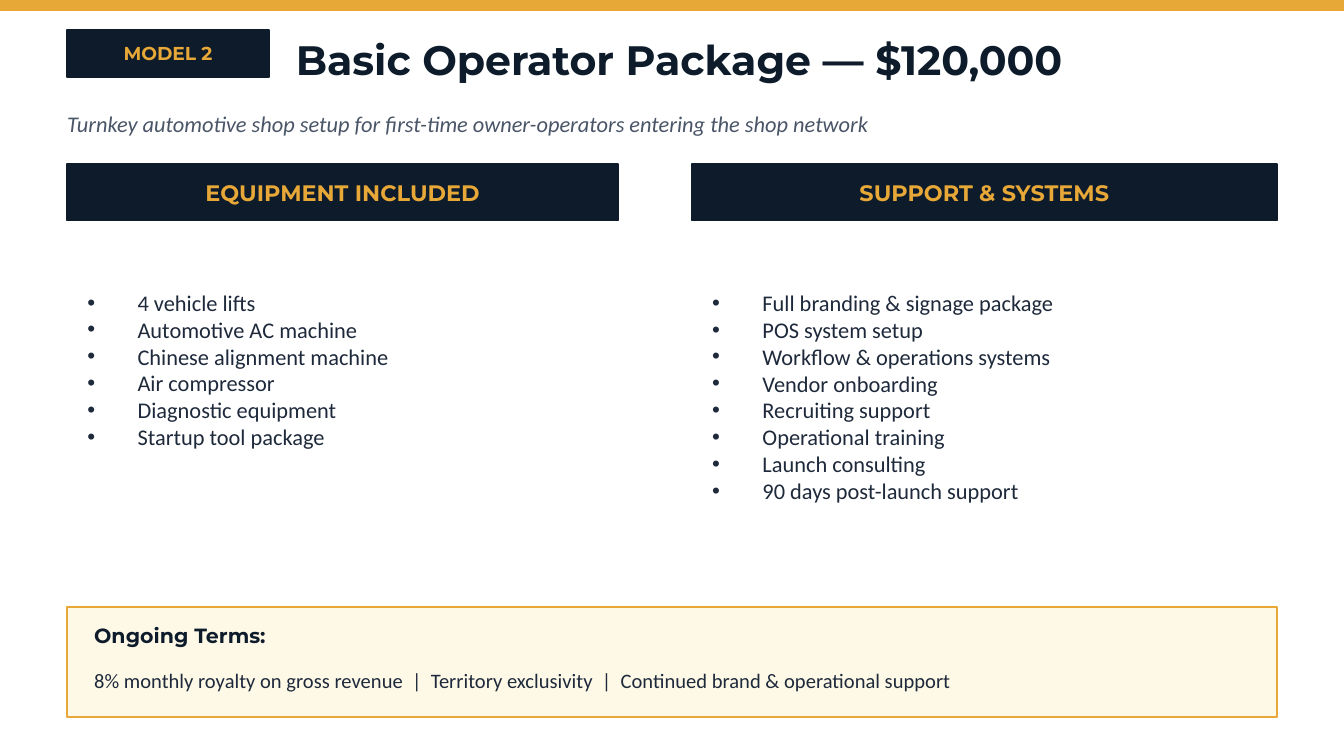
"""Build the Basic Operator Package slide."""
from dataclasses import dataclass

from lxml.etree import SubElement
from pptx import Presentation
from pptx.dml.color import RGBColor
from pptx.enum.shapes import MSO_SHAPE
from pptx.enum.text import MSO_ANCHOR, MSO_AUTO_SIZE, PP_ALIGN
from pptx.oxml.ns import qn
from pptx.util import Cm, Pt

BADGE = "MODEL 2"
TITLE = "Basic Operator Package — $120,000"
SUBTITLE = "Turnkey automotive shop setup for first-time owner-operators entering the shop network"
COLUMNS = [
    {
        "heading": "EQUIPMENT INCLUDED",
        "left": 1.27, "width": 10.41, "list_height": 5.33,
        "items": [
            "4 vehicle lifts",
            "Automotive AC machine",
            "Chinese alignment machine",
            "Air compressor",
            "Diagnostic equipment",
            "Startup tool package",
        ],
    },
    {
        "heading": "SUPPORT & SYSTEMS",
        "left": 13.08, "width": 11.05, "list_height": 6.35,
        "items": [
            "Full branding & signage package",
            "POS system setup",
            "Workflow & operations systems",
            "Vendor onboarding",
            "Recruiting support",
            "Operational training",
            "Launch consulting",
            "90 days post-launch support",
        ],
    },
]
TERMS_LABEL = "Ongoing Terms:"
TERMS = [
    "8% monthly royalty on gross revenue",
    "Territory exclusivity",
    "Continued brand & operational support",
]


@dataclass(frozen=True)
class Theme:
    navy: str = "0D1B2A"
    gold: str = "E8A838"
    cream: str = "FEF9E7"
    grey: str = "4A5568"
    ink: str = "1E293B"
    display: str = "Montserrat"
    text: str = "Calibri"
    title_size: int = 22
    body_size: int = 12
    terms_size: int = 11
    badge_size: int = 10


THEME = Theme()
WIDTH, HEIGHT = 25.4, 14.29
MARGIN = 1.27
CONTENT_WIDTH = WIDTH - 2 * MARGIN
LIST_INSET = 0.38
LIST_INDENT = 0.95
TERMS_INSET = 0.51


def place(shape, left, top, width, height):
    shape.left, shape.top = Cm(left), Cm(top)
    shape.width, shape.height = Cm(width), Cm(height)


def write(shape, lines, size, color, font=THEME.text, bold=False, italic=False,
          align=PP_ALIGN.LEFT):
    frame = shape.text_frame
    frame.text = "\n".join(lines)
    frame.word_wrap = True
    frame.auto_size = MSO_AUTO_SIZE.NONE
    frame.vertical_anchor = MSO_ANCHOR.MIDDLE
    frame.margin_left = frame.margin_right = frame.margin_top = frame.margin_bottom = 0
    for paragraph in frame.paragraphs:
        paragraph.alignment = align
        paragraph.space_before = Pt(0)
        for run in paragraph.runs:
            run.font.name, run.font.size = font, Pt(size)
            run.font.bold, run.font.italic = bold, italic
            run.font.color.rgb = RGBColor.from_string(color)


def add_bullets(shape):
    for paragraph in shape.text_frame.paragraphs:
        properties = paragraph._p.get_or_add_pPr()
        properties.set("marL", str(Cm(LIST_INDENT)))
        properties.set("indent", str(-Cm(LIST_INDENT)))
        SubElement(properties, qn("a:buChar")).set("char", "•")


def add_box(slide, left, top, width, height, fill, line):
    box = slide.shapes.add_shape(
        MSO_SHAPE.RECTANGLE, Cm(left), Cm(top), Cm(width), Cm(height))
    box.shadow.inherit = False
    box.fill.solid()
    box.fill.fore_color.rgb = RGBColor.from_string(fill)
    box.line.color.rgb = RGBColor.from_string(line)
    box.line.width = Pt(1)
    return box


def add_banner(slide, text, left, top, width, height, size):
    banner = add_box(slide, left, top, width, height, THEME.navy, THEME.navy)
    write(banner, [text], size, THEME.gold, THEME.display, bold=True,
          align=PP_ALIGN.CENTER)


def add_text(slide, text, left, top, width, height, size, color, **style):
    box = slide.shapes.add_textbox(Cm(left), Cm(top), Cm(width), Cm(height))
    write(box, [text], size, color, **style)


def main():
    presentation = Presentation()
    presentation.slide_width, presentation.slide_height = Cm(WIDTH), Cm(HEIGHT)
    slide = presentation.slides.add_slide(presentation.slide_layouts[3])
    title, *lists = slide.placeholders

    add_box(slide, 0, 0, WIDTH, 0.2, THEME.gold, THEME.gold)
    add_banner(slide, BADGE, MARGIN, 0.56, 3.81, 0.89, THEME.badge_size)
    place(title, 5.59, 0.51, 18.54, 1.22)
    write(title, [TITLE], THEME.title_size, THEME.navy, THEME.display, bold=True)
    add_text(slide, SUBTITLE, MARGIN, 1.93, CONTENT_WIDTH, 0.81,
             THEME.body_size, THEME.grey, italic=True)

    for column, body in zip(COLUMNS, lists):
        left, width = column["left"], column["width"]
        add_banner(slide, column["heading"], left, 3.1, width, 1.07, THEME.body_size)
        place(body, left + LIST_INSET, 4.32, width - 2 * LIST_INSET,
              column["list_height"])
        write(body, column["items"], THEME.body_size, THEME.ink)
        add_bullets(body)

    add_box(slide, MARGIN, 11.48, CONTENT_WIDTH, 2.08, THEME.cream, THEME.gold)
    terms_left = MARGIN + TERMS_INSET
    add_text(slide, TERMS_LABEL, terms_left, 11.63, 4.57, 0.76,
             THEME.terms_size, THEME.navy, font=THEME.display, bold=True)
    add_text(slide, "  |  ".join(TERMS), terms_left, 12.45,
             CONTENT_WIDTH - 2 * TERMS_INSET, 0.81, THEME.terms_size, THEME.ink)
    presentation.save("out.pptx")


if __name__ == "__main__":
    main()
